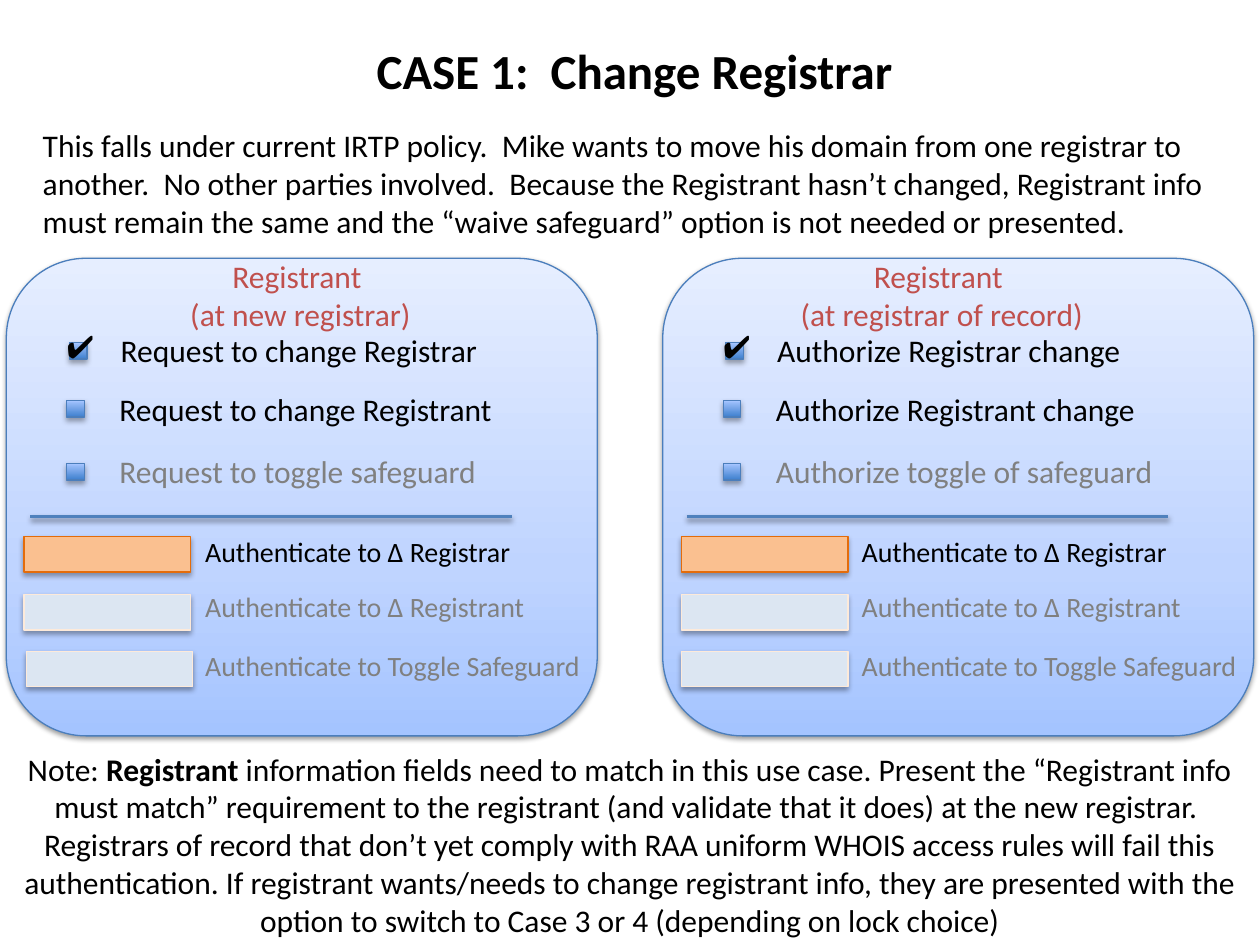
from copy import deepcopy

from lxml import etree
from pptx import Presentation
from pptx.dml.color import RGBColor
from pptx.enum import shapes, text
from pptx.oxml import ns
from pptx.util import Inches, Pt

BLACK, GREY, RED = "000000", "808080", "C0504D"
PANEL_STOPS = [(0, "A4C4FF"), (0.35, "BFD4FF"), (1, "E6EEFF")]
CHECKBOX_STOPS = [(0, "3F80CE"), (1, "A4C4FF")]
OUTLINE, RULE = "4B7EBC", "4F81BD"
ACTIVE_FIELD, INACTIVE_FIELD = ("FAC090", "E46C0A"), ("DCE6F2", "FDEADA")
AUTHENTICATIONS = [
    ("Authenticate to Δ Registrar", 2.68, BLACK, ACTIVE_FIELD),
    ("Authenticate to Δ Registrant", 2.79, GREY, INACTIVE_FIELD),
    ("Authenticate to Toggle Safeguard", 3.25, GREY, INACTIVE_FIELD),
]


def color(value):
    return RGBColor.from_string(value)


def inches(*lengths):
    return [Inches(length) for length in lengths]


def add_text(parent, box, *pieces, size=18, font="Calibri", fill=BLACK,
             bold=(), centered=False, wrap=False):
    frame = parent.add_textbox(*inches(*box)).text_frame
    frame.word_wrap = wrap
    frame.auto_size = text.MSO_AUTO_SIZE.SHAPE_TO_FIT_TEXT
    paragraph = frame.paragraphs[0]
    paragraph.alignment = text.PP_ALIGN.CENTER if centered else text.PP_ALIGN.LEFT
    for piece in pieces:
        if piece == "\n":
            paragraph.add_line_break()
            continue
        run = paragraph.add_run()
        run.text = piece
        run.font.size = Pt(size)
        run.font.name = font
        run.font.bold = piece in bold
        run.font.color.rgb = color(fill)


def add_shadow(properties, distance, opacity):
    effects = properties.find(ns.qn("a:effectLst"))
    if effects is None:
        effects = etree.SubElement(properties, ns.qn("a:effectLst"))
    shadow = etree.SubElement(effects, ns.qn("a:outerShdw"), blurRad=str(Pt(3.1)),
                              dist=str(Pt(distance)), dir="5400000", rotWithShape="0")
    tint = etree.SubElement(shadow, ns.qn("a:srgbClr"), val=BLACK)
    etree.SubElement(tint, ns.qn("a:alpha"), val=str(opacity * 1000))


def fill_gradient(shape, stops):
    shape.fill.gradient()
    shape.fill.gradient_angle = 90
    stop_list = shape._element.spPr.find(ns.qn("a:gradFill")).find(ns.qn("a:gsLst"))
    while len(stop_list) < len(stops):
        stop_list.append(deepcopy(stop_list[0]))
    for stop, (position, value) in zip(shape.fill.gradient_stops, stops):
        stop.position = position
        stop.color.rgb = color(value)


def add_block(parent, box, fill, outline=OUTLINE, preset=shapes.MSO_SHAPE.RECTANGLE,
              distance=1.8, opacity=35):
    block = parent.add_shape(preset, *inches(*box))
    if isinstance(fill, list):
        fill_gradient(block, fill)
    else:
        block.fill.solid()
        block.fill.fore_color.rgb = color(fill)
    block.line.color.rgb = color(outline)
    block.line.width = Pt(0.75)
    block.shadow.inherit = False
    add_shadow(block._element.spPr, distance, opacity)


def add_rule(parent, left, right, y):
    rule = parent.add_connector(shapes.MSO_CONNECTOR.STRAIGHT,
                                *inches(left, y, right, y))
    rule.line.color.rgb = color(RULE)
    rule.line.width = Pt(2)
    add_shadow(rule._element.spPr, 1.6, 38)


def add_panel(slide, box, place, caption_inset, requests, field_insets):
    left, top, width, height = box
    parts = slide.shapes.add_group_shape().shapes
    add_block(parts, box, PANEL_STOPS, preset=shapes.MSO_SHAPE.ROUNDED_RECTANGLE,
              distance=1.6, opacity=38)
    add_text(parts, (left + caption_inset, top - 0.06, 3.07, 0.71),
             "Registrant ", "\n", place, fill=RED, centered=True, wrap=True)

    rows = zip(requests, (BLACK, BLACK, GREY), (0.53, 1, 1.49),
               (0.67, 1.13, 1.63), (0.02, 0, 0))
    for request, fill, text_y, checkbox_y, shift in rows:
        add_block(parts, (left + 0.48 + shift, top + checkbox_y, 0.14, 0.13),
                  CHECKBOX_STOPS)
        add_text(parts, (left + 0.8 + shift / 2, top + text_y, 3.2, 0.4),
                 request, fill=fill)
    add_text(parts, (left + 0.38, top + 0.5, 0.43, 0.4), "✔", font="Arial")

    add_rule(parts, left + 0.19, left + 4.01, top + 2.05)

    rows = zip(AUTHENTICATIONS, field_insets, (2.14, 2.58, 3.05), (2.21, 2.67, 3.12))
    for (label, label_width, fill, field), inset, text_y, field_y in rows:
        add_block(parts, (left + inset, top + field_y, 1.32, 0.28), *field)
        add_text(parts, (left + 1.48, top + text_y, label_width, 0.37),
                 label, size=16, fill=fill)


def add_heading(slide, title_box, intro_box):
    add_text(slide.shapes, title_box, "CASE 1:  Change Registrar", size=28,
             bold=("CASE 1:  Change Registrar",), centered=True)
    add_text(slide.shapes, intro_box,
             "This falls under current IRTP policy.  Mike wants to move his domain "
             "from one registrar to another.  No other parties involved.  Because the "
             "Registrant hasn’t changed, Registrant info must remain the same and the "
             "“waive safeguard” option is not needed or presented.", wrap=True)


def add_note(slide, box):
    add_text(slide.shapes, box, "Note: ", "Registrant",
             " information fields need to match in this use case. Present the "
             "“Registrant info must match” requirement to the registrant (and validate "
             "that it does) at the new registrar.  Registrars of record that don’t yet "
             "comply with RAA uniform WHOIS access rules will fail this authentication. "
             "If registrant wants/needs to change registrant info, they are presented "
             "with the option to switch to Case 3 or 4 (depending on lock choice)",
             bold=("Registrant",), centered=True, wrap=True)


def main():
    deck = Presentation()
    deck.slide_width, deck.slide_height = inches(10, 7.5)
    slide = deck.slides.add_slide(deck.slide_layouts[6])
    add_heading(slide, (2.85, 0.27, 4.37, 0.57), (0.24, 0.95, 9.42, 1.01))
    add_panel(slide, (0.05, 2.05, 4.69, 3.79), "(at new registrar)", 0.8,
              ["Request to change Registrar", "Request to change Registrant",
               "Request to toggle safeguard"], (0.14, 0.14, 0.16))
    add_panel(slide, (5.26, 2.05, 4.69, 3.79), "(at registrar of record)", 0.68,
              ["Authorize Registrar change", "Authorize Registrant change",
               "Authorize toggle of safeguard"], (0.15, 0.15, 0.15))
    add_note(slide, (0.05, 5.9, 9.9, 1.62))
    deck.save("out.pptx")


if __name__ == "__main__":
    main()
